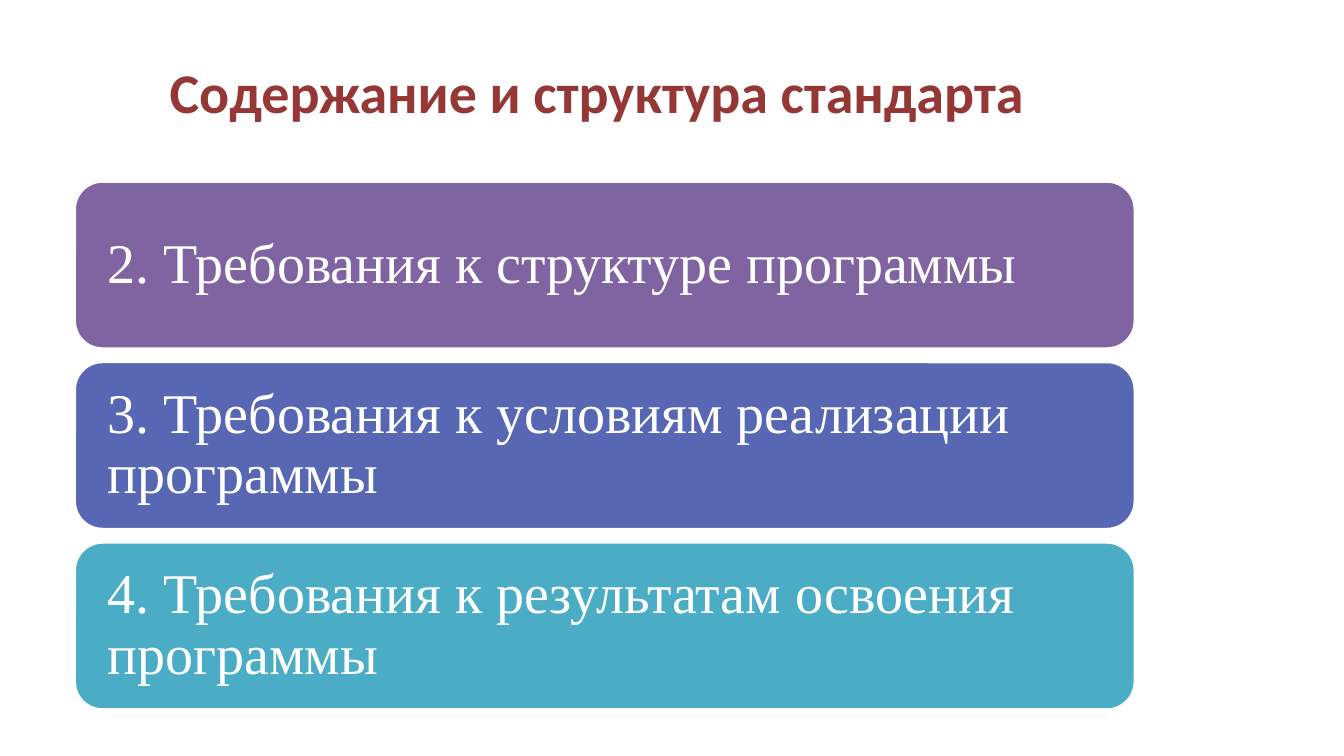
from pptx import Presentation
from pptx.dml.color import RGBColor
from pptx.enum.shapes import MSO_SHAPE
from pptx.enum.text import MSO_ANCHOR, PP_ALIGN
from pptx.util import Pt

WHITE = RGBColor(0xFF, 0xFF, 0xFF)
RED = RGBColor(0x95, 0x37, 0x35)
PURPLE = RGBColor(0x80, 0x64, 0xA2)
BLUE = RGBColor(0x57, 0x67, 0xB4)
TEAL = RGBColor(0x4B, 0xAC, 0xC6)

PARTS = [
    ("2. Требования к структуре программы", PURPLE),
    ("3. Требования к условиям реализации программы", BLUE),
    ("4. Требования к результатам освоения программы", TEAL),
]
TOP = 129.6
STEP = 128.9


def put_text(shape, text, face, color, align, bold=False):
    frame = shape.text_frame
    frame.word_wrap = True
    frame.vertical_anchor = MSO_ANCHOR.MIDDLE
    para = frame.paragraphs[0]
    para.alignment = align
    run = para.add_run()
    run.text = text
    font = run.font
    font.name = face
    font.size = Pt(40)
    font.bold = bold
    font.color.rgb = color
    return para


def add_title(slide, text):
    box = slide.shapes.add_textbox(Pt(105.1), Pt(29.5), Pt(642.2), Pt(70.6))
    put_text(box, text, "Calibri", RED, PP_ALIGN.CENTER, True)


def add_bar(slide, top, text, fill):
    bar = slide.shapes.add_shape(
        MSO_SHAPE.ROUNDED_RECTANGLE, Pt(53.3), Pt(top), Pt(757.4), Pt(119.5))
    bar.shadow.inherit = False
    bar.fill.solid()
    bar.fill.fore_color.rgb = fill
    bar.line.color.rgb = WHITE
    bar.line.width = Pt(2)
    frame = bar.text_frame
    frame.margin_left = frame.margin_right = Pt(18)
    frame.margin_top = frame.margin_bottom = Pt(18)
    para = put_text(bar, text, "Times New Roman", WHITE, PP_ALIGN.LEFT)
    para.line_spacing = 0.9


def main():
    deck = Presentation()
    deck.slide_width = Pt(960)
    deck.slide_height = Pt(540)
    slide = deck.slides.add_slide(deck.slide_layouts[6])
    add_title(slide, "Содержание и структура стандарта")
    for i, (text, fill) in enumerate(PARTS):
        add_bar(slide, TOP + i * STEP, text, fill)
    deck.save("out.pptx")


if __name__ == "__main__":
    main()
